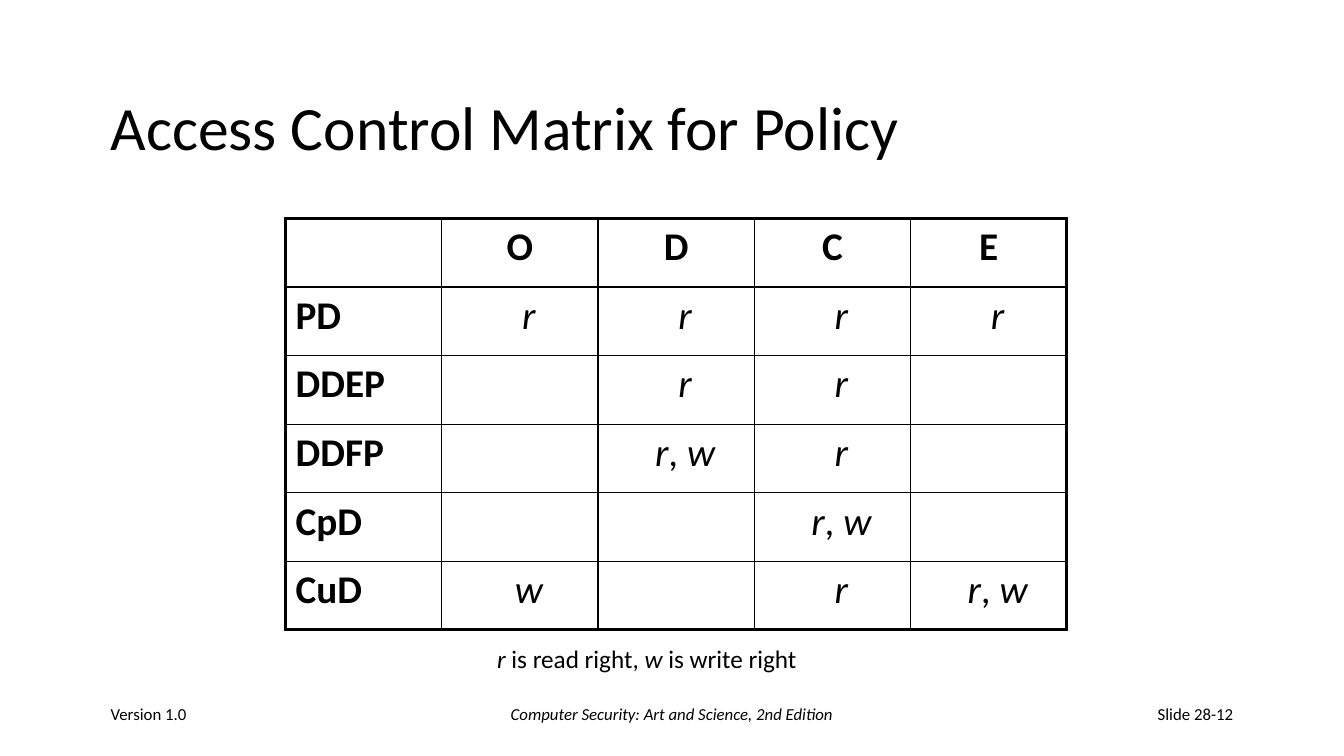
from dataclasses import dataclass

from lxml.etree import SubElement
from pptx import Presentation
from pptx.dml.color import RGBColor
from pptx.enum.text import MSO_ANCHOR, PP_ALIGN
from pptx.oxml.ns import qn
from pptx.util import Pt


@dataclass(frozen=True)
class Theme:
    font: str = "Calibri"
    ink: str = "000000"
    title: float = 44
    cell: float = 28
    note: float = 18
    footer: float = 12
    thin: float = 1
    thick: float = 2.25


THEME = Theme()
SUBJECTS = ["O", "D", "C", "E"]
RIGHTS = {
    "PD": ["r", "r", "r", "r"],
    "DDEP": ["", "r", "r", ""],
    "DDFP": ["", "r, w", "r", ""],
    "CpD": ["", "", "r, w", ""],
    "CuD": ["w", "", "r", "r, w"],
}


def add_run(p, text, size, bold=False, italic=False):
    r = p.add_run()
    r.text = text
    r.font.name = THEME.font
    r.font.size = Pt(size)
    r.font.bold = bold
    r.font.italic = italic
    r.font.color.rgb = RGBColor.from_string(THEME.ink)


def add_text(slide, box, runs, size, align=PP_ALIGN.LEFT,
             anchor=MSO_ANCHOR.MIDDLE, wrap=True):
    sp = slide.shapes.add_textbox(*(Pt(v) for v in box))
    tf = sp.text_frame
    tf.word_wrap = wrap
    tf.vertical_anchor = anchor
    p = tf.paragraphs[0]
    p.alignment = align
    for text, italic in runs:
        add_run(p, text, size, italic=italic)
    return p


def add_title(slide, box):
    p = add_text(slide, box, [("Access Control Matrix for Policy", False)], THEME.title)
    p.line_spacing = 0.9


def set_borders(cell, widths):
    tcPr = cell._tc.get_or_add_tcPr()
    for side, width in zip("LRTB", widths):
        ln = SubElement(tcPr, qn(f"a:ln{side}"), w=str(Pt(width)))
        fill = SubElement(ln, qn("a:solidFill"))
        SubElement(fill, qn("a:srgbClr"), val=THEME.ink)


def fill_rights(cell, rights):
    cell.margin_left = Pt(19.8)
    p = cell.text_frame.paragraphs[0]
    p.alignment = PP_ALIGN.CENTER
    for i, right in enumerate(rights.split(", ")):
        if i:
            add_run(p, ", ", THEME.cell)
        add_run(p, right, THEME.cell, italic=True)


def add_matrix(slide, box):
    rows = [["", *SUBJECTS]] + [[name, *rights] for name, rights in RIGHTS.items()]
    n_rows, n_cols = len(rows), len(rows[0])
    table = slide.shapes.add_table(n_rows, n_cols, *(Pt(v) for v in box)).table
    table.first_row = table.horz_banding = False
    for column in table.columns:
        column.width = Pt(box[2] / n_cols)
    for row in table.rows:
        row.height = Pt(box[3] / n_rows)
    for i, row in enumerate(rows):
        for j, text in enumerate(row):
            cell = table.cell(i, j)
            outer = (j == 0, j == n_cols - 1, i == 0, i == n_rows - 1)
            set_borders(cell, [THEME.thick if edge else THEME.thin for edge in outer])
            cell.fill.background()
            if not text:
                continue
            if i and j:
                fill_rights(cell, text)
            else:
                p = cell.text_frame.paragraphs[0]
                p.alignment = PP_ALIGN.CENTER if j else PP_ALIGN.LEFT
                add_run(p, text, THEME.cell, bold=True)


def add_note(slide, box):
    runs = [("r", True), (" is read right, ", False),
            ("w", True), (" is write right", False)]
    add_text(slide, box, runs, THEME.note, anchor=MSO_ANCHOR.TOP, wrap=False)


def add_footer(slide, box):
    left, top, width, height = box
    side, middle = 200, 304
    parts = [
        (left, side, "Version 1.0", False, PP_ALIGN.LEFT),
        (left + (width - middle) / 2, middle,
         "Computer Security: Art and Science, 2nd Edition", True, PP_ALIGN.CENTER),
        (left + width - side, side, "Slide 28-12", False, PP_ALIGN.RIGHT),
    ]
    for x, w, text, italic, align in parts:
        add_text(slide, (x, top, w, height), [(text, italic)], THEME.footer, align)


def main():
    prs = Presentation()
    prs.slide_width, prs.slide_height = Pt(960), Pt(540)
    slide = prs.slides.add_slide(prs.slide_layouts[6])
    add_title(slide, (72, 48, 816, 90))
    add_matrix(slide, (204, 156, 558, 294))
    add_note(slide, (348, 456, 231, 29))
    add_footer(slide, (72, 492, 816, 36))
    prs.save("out.pptx")


if __name__ == "__main__":
    main()
